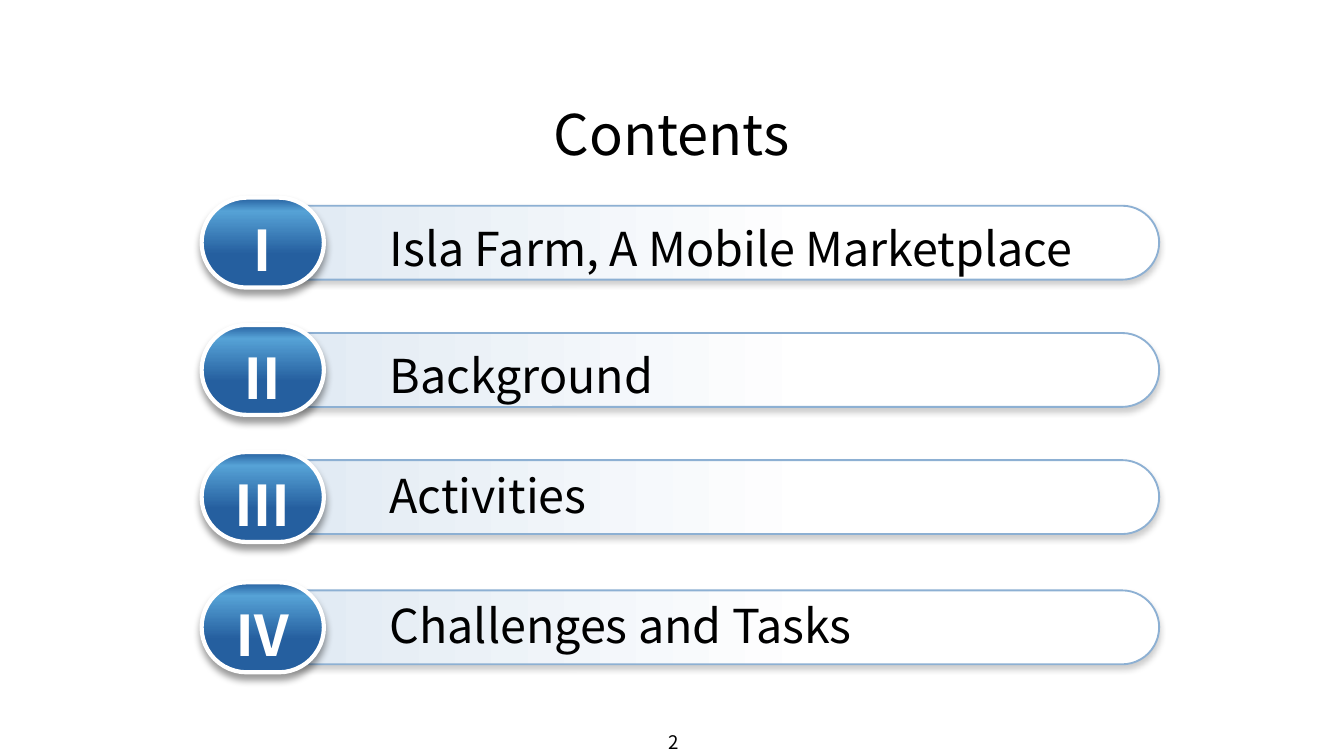
from dataclasses import dataclass

from lxml.etree import SubElement as Sub
from pptx import Presentation
from pptx.dml.color import RGBColor as Rgb
from pptx.enum.shapes import MSO_SHAPE as Kind
from pptx.enum.text import MSO_ANCHOR as Anchor, MSO_AUTO_SIZE as Auto, PP_ALIGN as Align
from pptx.oxml.ns import qn
from pptx.shapes.autoshape import Shape
from pptx.slide import Slide
from pptx.util import Pt


@dataclass(frozen=True)
class Theme:
    face: str = "Noto Sans CJK KR"
    ink: str = "000000"
    white: str = "FFFFFF"
    edge: str = "8DB0D3"
    pale: str = "DEE8F2"
    deep: str = "255F9F"
    light: str = "56A2D6"
    head: float = 30
    body: float = 25
    foot: float = 10


@dataclass(frozen=True)
class Box:
    left: float
    top: float
    width: float
    height: float


@dataclass(frozen=True)
class Shade:
    alpha: int
    blur: float
    gap: float


@dataclass(frozen=True)
class Row:
    mark: str
    label: str
    top: float
    drop: float


THEME = Theme()
ROWS = [
    Row("Ⅰ", "Isla Farm, A Mobile Marketplace", 105.9, 8.3),
    Row("Ⅱ", "Background", 174.1, 8.3),
    Row("Ⅲ", "Activities", 242.2, 4.2),
    Row("Ⅳ", "Challenges and Tasks", 312, 4.2),
]


def write(shape: Shape, text: str, size: float, color: str, align: Align,
          pads: tuple[float, ...], bold: bool = False) -> None:
    frame = shape.text_frame
    frame.margin_left, frame.margin_top, frame.margin_right, frame.margin_bottom = map(Pt, pads)
    para = frame.paragraphs[0]
    para.text = text
    para.alignment = align
    font = para.font
    font.name, font.size, font.bold = THEME.face, Pt(size), bold
    font.color.rgb = Rgb.from_string(color)
    for tag in ("a:ea", "a:sym"):
        Sub(font._element, qn(tag), typeface=THEME.face)


def add_text(slide: Slide, box: Box, text: str, size: float, align: Align,
             pads: tuple[float, ...], wrap: bool = True) -> None:
    shape = slide.shapes.add_textbox(Pt(box.left), Pt(box.top), Pt(box.width), Pt(box.height))
    write(shape, text, size, THEME.ink, align, pads)
    shape.text_frame.word_wrap = wrap
    if wrap:
        shape.text_frame.auto_size = Auto.SHAPE_TO_FIT_TEXT


def add_pill(slide: Slide, kind: Kind, box: Box, stops: list[tuple[int, str]],
             angle: int, edge: str, weight: float, shade: Shade) -> Shape:
    shape = slide.shapes.add_shape(kind, Pt(box.left), Pt(box.top), Pt(box.width), Pt(box.height))
    shape.adjustments[0] = 0.5
    props = shape._element.spPr
    grad = Sub(props, qn("a:gradFill"), rotWithShape="1")
    parts = Sub(grad, qn("a:gsLst"))
    for pos, color in stops:
        stop = Sub(parts, qn("a:gs"), pos=str(pos * 1000))
        Sub(stop, qn("a:srgbClr"), val=color)
    Sub(grad, qn("a:lin"), ang=str(angle * 60000), scaled="0")
    shape.line.color.rgb = Rgb.from_string(edge)
    shape.line.width = Pt(weight)
    cast = Sub(Sub(props, qn("a:effectLst")), qn("a:outerShdw"), blurRad=str(Pt(shade.blur)),
               dist=str(Pt(shade.gap)), dir="5400000", algn="t", rotWithShape="0")
    tint = Sub(cast, qn("a:srgbClr"), val=THEME.ink)
    Sub(tint, qn("a:alpha"), val=str(shade.alpha * 1000))
    return shape


def add_row(slide: Slide, row: Row) -> None:
    long, thick, high = 493.9, 39.6, 48.2
    mid = row.top + high / 2
    bar = add_pill(slide, Kind.ROUND_2_SAME_RECTANGLE,
                   Box(374 - thick / 2, mid - long / 2, thick, long),
                   [(0, THEME.pale), (63, THEME.white), (100, THEME.white)],
                   270, THEME.edge, 1, Shade(20, 3, 2))
    bar.adjustments[1] = 0.5
    bar.rotation = 90
    badge = add_pill(slide, Kind.ROUNDED_RECTANGLE, Box(108, row.top, 65.5, high),
                     [(0, THEME.deep), (15, THEME.light), (63, THEME.deep), (100, THEME.deep)],
                     90, THEME.white, 2.25, Shade(40, 4, 3))
    write(badge, row.mark, THEME.head, THEME.white, Align.CENTER, (7.2, 0, 7.2, 3.6), True)
    badge.text_frame.vertical_anchor = Anchor.MIDDLE
    badge.text_frame.paragraphs[0].line_spacing = 1.3
    add_text(slide, Box(173.5, row.top + row.drop, 447, 37.4), row.label,
             THEME.body, Align.LEFT, (35.2, 3.6, 7.2, 3.6))


def main() -> None:
    deck = Presentation()
    deck.slide_width, deck.slide_height = Pt(720), Pt(405)
    slide = deck.slides.add_slide(deck.slide_layouts[6])
    add_text(slide, Box(337, 391.7, 48.2, 9.4), "2", THEME.foot, Align.CENTER, (0, 0, 0, 0), False)
    add_text(slide, Box(160.6, 49.7, 398.2, 43.9), "Contents", THEME.head, Align.CENTER,
             (7.2, 3.6, 7.2, 3.6))
    for row in ROWS:
        add_row(slide, row)
    deck.save("out.pptx")


if __name__ == "__main__":
    main()
